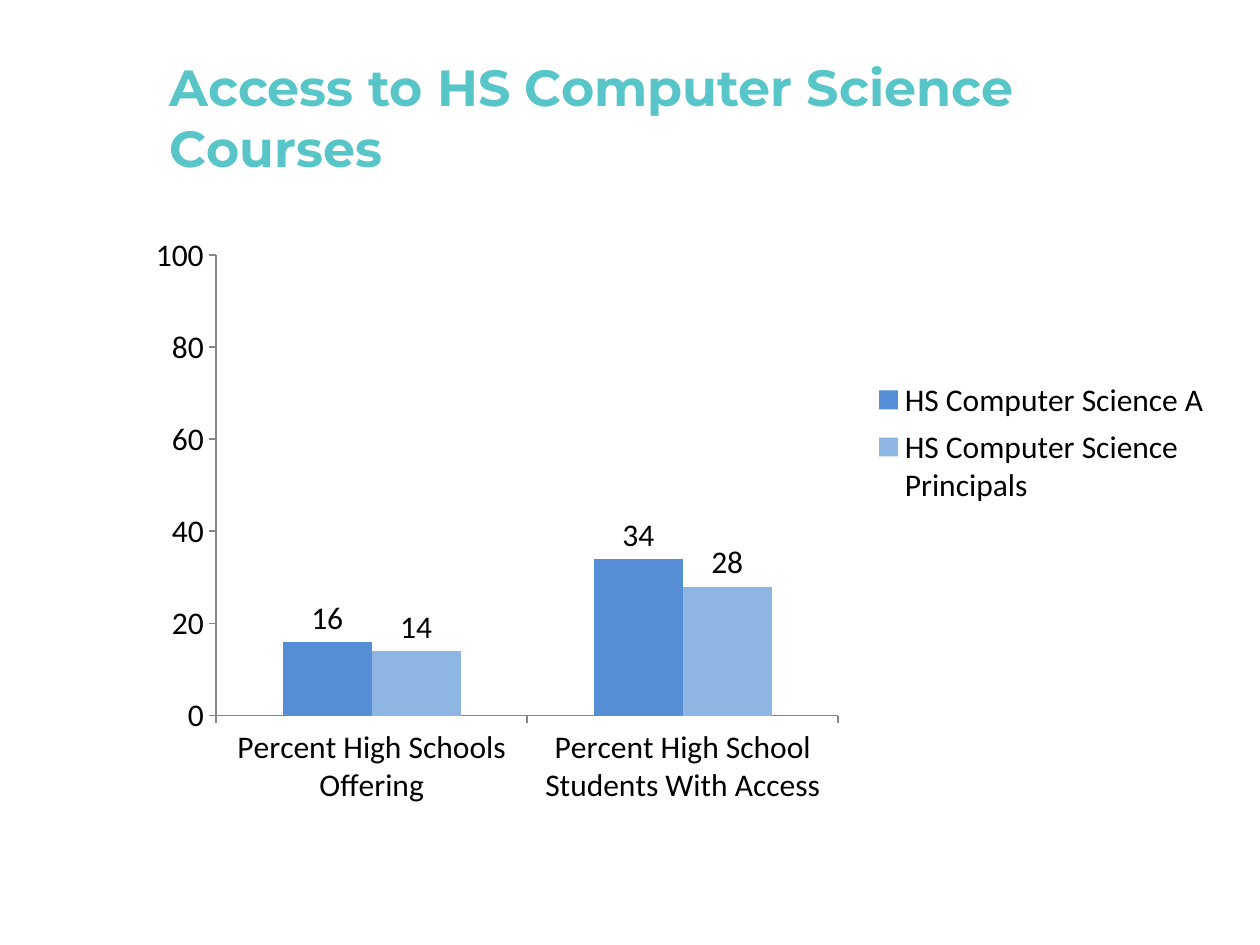
from dataclasses import dataclass

from lxml.etree import SubElement
from pptx import Presentation
from pptx.chart.data import CategoryChartData
from pptx.dml.color import RGBColor
from pptx.enum.chart import XL_CHART_TYPE, XL_LABEL_POSITION, XL_LEGEND_POSITION, XL_TICK_MARK
from pptx.enum.text import MSO_ANCHOR
from pptx.oxml.ns import qn
from pptx.util import Inches, Pt

WIDTH, HEIGHT = Inches(10), Inches(7.5)


@dataclass(frozen=True)
class Theme:
    title: str = "58C5C9"
    ink: str = "000000"
    axis: str = "868686"
    head_font: str = "Montserrat"
    body_font: str = "Calibri"
    head_size: float = 29
    body_size: float = 18


@dataclass(frozen=True)
class Box:
    """Shares of the width and height of the slide or chart."""
    left: float
    top: float
    width: float
    height: float

    def place(self) -> tuple[int, ...]:
        return (int(self.left * WIDTH), int(self.top * HEIGHT),
                int(self.width * WIDTH), int(self.height * HEIGHT))


@dataclass(frozen=True)
class Course:
    name: str
    rates: tuple[int, ...]
    color: str


THEME = Theme()
GROUPS = ("Percent High Schools Offering", "Percent High School Students With Access")
COURSES = (
    Course("HS Computer Science A", (16, 34), "558ED5"),
    Course("HS Computer Science Principals", (14, 28), "8EB6E3"),
)


def style(font, face: str, size: float, color: str, bold: bool = False) -> None:
    font.name, font.size, font.bold = face, Pt(size), bold
    font.color.rgb = RGBColor.from_string(color)


def add_title(slide, box: Box, text: str) -> None:
    frame = slide.shapes.add_textbox(*box.place()).text_frame
    frame.word_wrap = True
    frame.vertical_anchor = MSO_ANCHOR.MIDDLE
    run = frame.paragraphs[0].add_run()
    run.text = text
    style(run.font, THEME.head_font, THEME.head_size, THEME.title, True)


def set_layout(part, box: Box, index: int, inner: bool = False) -> None:
    """Fix a chart part at shares of the chart."""
    for old in part.findall(qn("c:layout")):
        part.remove(old)
    layout = SubElement(part, qn("c:layout"))
    part.insert(index, layout)
    manual = SubElement(layout, qn("c:manualLayout"))
    target = (("layoutTarget", "inner"),) if inner else ()
    sides = (("xMode", "edge"), ("yMode", "edge"), ("x", box.left),
             ("y", box.top), ("w", box.width), ("h", box.height))
    for tag, val in target + sides:
        SubElement(manual, qn(f"c:{tag}")).set("val", str(val))


def style_axis(axis) -> None:
    axis.has_major_gridlines = False
    axis.major_tick_mark = XL_TICK_MARK.OUTSIDE
    axis.minor_tick_mark = XL_TICK_MARK.NONE
    axis.format.line.color.rgb = RGBColor.from_string(THEME.axis)
    axis.format.line.width = Pt(1)


def add_bars(slide, box: Box, plot_box: Box, key_box: Box) -> None:
    data = CategoryChartData()
    data.categories = GROUPS
    for course in COURSES:
        data.add_series(course.name, course.rates)
    chart = slide.shapes.add_chart(
        XL_CHART_TYPE.COLUMN_CLUSTERED, *box.place(), data).chart
    style(chart.font, THEME.body_font, THEME.body_size, THEME.ink)
    chart.has_title = False
    set_layout(chart._chartSpace.chart.plotArea, plot_box, 0, inner=True)

    # Axes
    for axis in (chart.category_axis, chart.value_axis):
        style_axis(axis)
    scale = chart.value_axis
    scale.minimum_scale, scale.maximum_scale, scale.major_unit = 0, 100, 20

    # Legend
    chart.has_legend = True
    chart.legend.position = XL_LEGEND_POSITION.RIGHT
    chart.legend.include_in_layout = False
    set_layout(chart._chartSpace.chart.find(qn("c:legend")), key_box, 1)

    # Bars and labels
    plot = chart.plots[0]
    plot.vary_by_categories = False
    plot.gap_width, plot.overlap = 150, 0
    for bars, course in zip(plot.series, COURSES):
        bars.format.fill.solid()
        bars.format.fill.fore_color.rgb = RGBColor.from_string(course.color)
        bars.data_labels.show_value = True
        bars.data_labels.position = XL_LABEL_POSITION.OUTSIDE_END


def main() -> None:
    deck = Presentation()
    deck.slide_width, deck.slide_height = WIDTH, HEIGHT
    slide = deck.slides.add_slide(deck.slide_layouts[6])
    add_title(slide, Box(0.125, 0.04, 0.825, 0.167),
              "Access to HS Computer Science Courses")
    add_bars(slide, Box(0.108, 0.244, 0.871, 0.623),
             Box(0.073, 0.042, 0.567, 0.782), Box(0.66, 0.24, 0.33, 0.24))
    deck.save("out.pptx")


if __name__ == "__main__":
    main()
